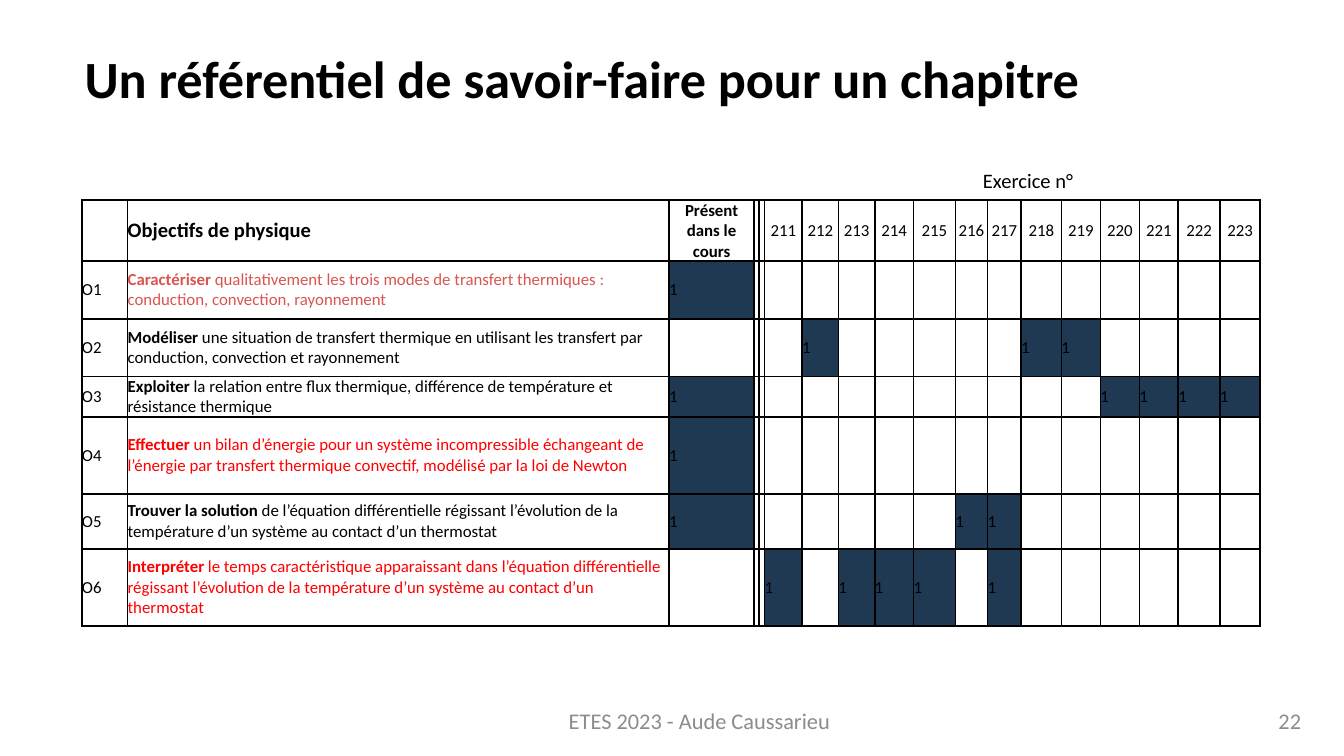
from dataclasses import dataclass
from typing import Any

import pptx
import pptx.dml.color
import pptx.enum.text
import pptx.oxml
import pptx.oxml.ns
import pptx.util

ALIGN = pptx.enum.text.PP_ALIGN
ANCHOR = pptx.enum.text.MSO_ANCHOR
FONT = "Calibri"
COLORS = {
    "black": "000000",
    "grey": "8C8C8C",
    "rose": "D85551",
    "red": "FF0000",
    "navy": "203953",
}
BORDER_POINTS = 1
BODY_POINTS = 9


@dataclass(frozen=True)
class Frame:
    """A rectangle in percent of the slide's width and height."""
    left: float
    top: float
    width: float
    height: float


@dataclass(frozen=True)
class Span:
    text: str
    size: float = BODY_POINTS
    color: str = "black"
    bold: bool = False


@dataclass(frozen=True)
class Goal:
    """A skill, whether the course covers it, and the exercises that train it."""
    verb: str
    rest: str
    height: float
    in_course: bool = False
    exercises: tuple[int, ...] = ()
    color: str = "black"


EXERCISES = range(211, 224)
FIRST_EXERCISE_COLUMN = 5
HEADER_HEIGHT = 7.65
# Column widths in percent of the slide's width: code, goal, course, two gaps, exercises
COLUMNS = (3.4, 40.3, 6.3, 0.4, 0.4,
           2.8, 2.7, 2.7, 2.9, 3.1, 2.4, 2.5, 3, 2.9, 2.9, 2.9, 3.1, 3)

GOALS = (
    Goal("Caractériser", " qualitativement les trois modes de transfert thermiques : "
         "conduction, convection, rayonnement", 7.65, True, color="rose"),
    Goal("Modéliser", " une situation de transfert thermique en utilisant les transfert "
         "par conduction, convection et rayonnement", 7.65, False, (212, 218, 219)),
    Goal("Exploiter ", "la relation entre flux thermique, différence de température et "
         "résistance thermique", 5.16, True, (220, 221, 222, 223)),
    Goal("Effectuer", " un bilan d’énergie pour un système incompressible échangeant de "
         "l’énergie par transfert thermique convectif, modélisé par la loi de Newton",
         10.17, True, color="red"),
    Goal("Trouver la solution ", "de l’équation différentielle régissant l’évolution de "
         "la température d’un système au contact d’un thermostat", 7.3, True, (216, 217)),
    Goal("Interpréter", " le temps caractéristique apparaissant dans l’équation "
         "différentielle régissant l’évolution de la température d’un système au contact "
         "d’un thermostat", 10.17, False, (211, 213, 214, 215, 217), "red"),
)

deck = pptx.Presentation()
deck.slide_width = pptx.util.Inches(10)
deck.slide_height = deck.slide_width * 9 // 16


def across(percent: float) -> int:
    return round(deck.slide_width * percent / 100)


def down(percent: float) -> int:
    return round(deck.slide_height * percent / 100)


def place(frame: Frame) -> tuple[int, int, int, int]:
    return across(frame.left), down(frame.top), across(frame.width), down(frame.height)


def rgb(name: str) -> pptx.dml.color.RGBColor:
    return pptx.dml.color.RGBColor.from_string(COLORS[name])


def write(text_frame: Any, spans: tuple[Span, ...], align: ALIGN) -> None:
    para = text_frame.paragraphs[0]
    para.alignment = align
    for span in spans:
        run = para.add_run()
        run.text = span.text
        run.font.name = FONT
        run.font.size = pptx.util.Pt(span.size)
        run.font.bold = span.bold
        run.font.color.rgb = rgb(span.color)


def add_title(page: Any, frame: Frame, span: Span) -> None:
    title = page.shapes.title
    title.left, title.top, title.width, title.height = place(frame)
    title.text_frame.auto_size = pptx.enum.text.MSO_AUTO_SIZE.NONE
    title.text_frame.vertical_anchor = ANCHOR.MIDDLE
    write(title.text_frame, (span,), ALIGN.LEFT)
    title.text_frame.paragraphs[0].line_spacing = 0.8


def add_label(page: Any, frame: Frame, span: Span, align: ALIGN, anchor: ANCHOR) -> None:
    box = page.shapes.add_textbox(*place(frame))
    box.text_frame.word_wrap = True
    box.text_frame.vertical_anchor = anchor
    write(box.text_frame, (span,), align)


def add_borders(cell: Any) -> None:
    properties = cell._tc.get_or_add_tcPr()
    for side in ("lnL", "lnR", "lnT", "lnB"):
        properties.append(pptx.oxml.parse_xml(
            f'<a:{side} {pptx.oxml.ns.nsdecls("a")} w="{pptx.util.Pt(BORDER_POINTS)}">'
            f'<a:solidFill><a:srgbClr val="{COLORS["black"]}"/></a:solidFill></a:{side}>'))


def format_cell(cell: Any) -> None:
    """Set borders, no insets and no fill, and keep empty cells at body size."""
    add_borders(cell)
    cell.fill.background()
    cell.margin_left = cell.margin_right = cell.margin_top = cell.margin_bottom = 0
    cell.vertical_anchor = ANCHOR.MIDDLE
    cell.text_frame.paragraphs[0]._p.append(pptx.oxml.parse_xml(
        f'<a:endParaRPr {pptx.oxml.ns.nsdecls("a")} sz="{BODY_POINTS * 100}"/>'))


def mark(cell: Any) -> None:
    cell.fill.solid()
    cell.fill.fore_color.rgb = rgb("navy")
    write(cell.text_frame, (Span("1"),), ALIGN.LEFT)


def add_goal_table(page: Any, left: float, top: float) -> None:
    heights = (HEADER_HEIGHT, *(goal.height for goal in GOALS))
    frame = Frame(left, top, sum(COLUMNS), sum(heights))
    table = page.shapes.add_table(len(heights), len(COLUMNS), *place(frame)).table
    table.first_row = table.horz_banding = False
    for column, width in zip(table.columns, COLUMNS):
        column.width = across(width)
    for row, height in zip(table.rows, heights):
        row.height = down(height)
    for cell in table.iter_cells():
        format_cell(cell)

    write(table.cell(0, 1).text_frame,
          (Span("Objectifs de physique", 11, bold=True),), ALIGN.LEFT)
    write(table.cell(0, 2).text_frame,
          (Span("Présent dans le cours", bold=True),), ALIGN.CENTER)
    for column, number in enumerate(EXERCISES, FIRST_EXERCISE_COLUMN):
        write(table.cell(0, column).text_frame, (Span(str(number)),), ALIGN.CENTER)

    for row, goal in enumerate(GOALS, 1):
        write(table.cell(row, 0).text_frame, (Span(f"O{row}"),), ALIGN.LEFT)
        write(table.cell(row, 1).text_frame,
              (Span(goal.verb, color=goal.color, bold=True),
               Span(goal.rest, color=goal.color)), ALIGN.LEFT)
        if goal.in_course:
            mark(table.cell(row, 2))
        for number in goal.exercises:
            mark(table.cell(row, FIRST_EXERCISE_COLUMN + EXERCISES.index(number)))


def main() -> None:
    page = deck.slides.add_slide(deck.slide_layouts.get_by_name("Title Only"))
    add_title(page, Frame(5.3, 2.67, 89.5, 16.71),
              Span("Un référentiel de savoir-faire pour un chapitre", 28, bold=True))
    add_label(page, Frame(74.5, 92.7, 23.3, 5.33), Span("22", 12, "grey"),
              ALIGN.RIGHT, ANCHOR.MIDDLE)
    add_goal_table(page, 6.1, 26.49)
    add_label(page, Frame(59.3, 21.33, 34.4, 5.16), Span("Exercice n°", 11),
              ALIGN.CENTER, ANCHOR.TOP)
    add_label(page, Frame(36.2, 92.7, 31.7, 5.33),
              Span("ETES 2023 - Aude Caussarieu", 12, "grey"),
              ALIGN.CENTER, ANCHOR.MIDDLE)
    deck.save("out.pptx")


if __name__ == "__main__":
    main()
